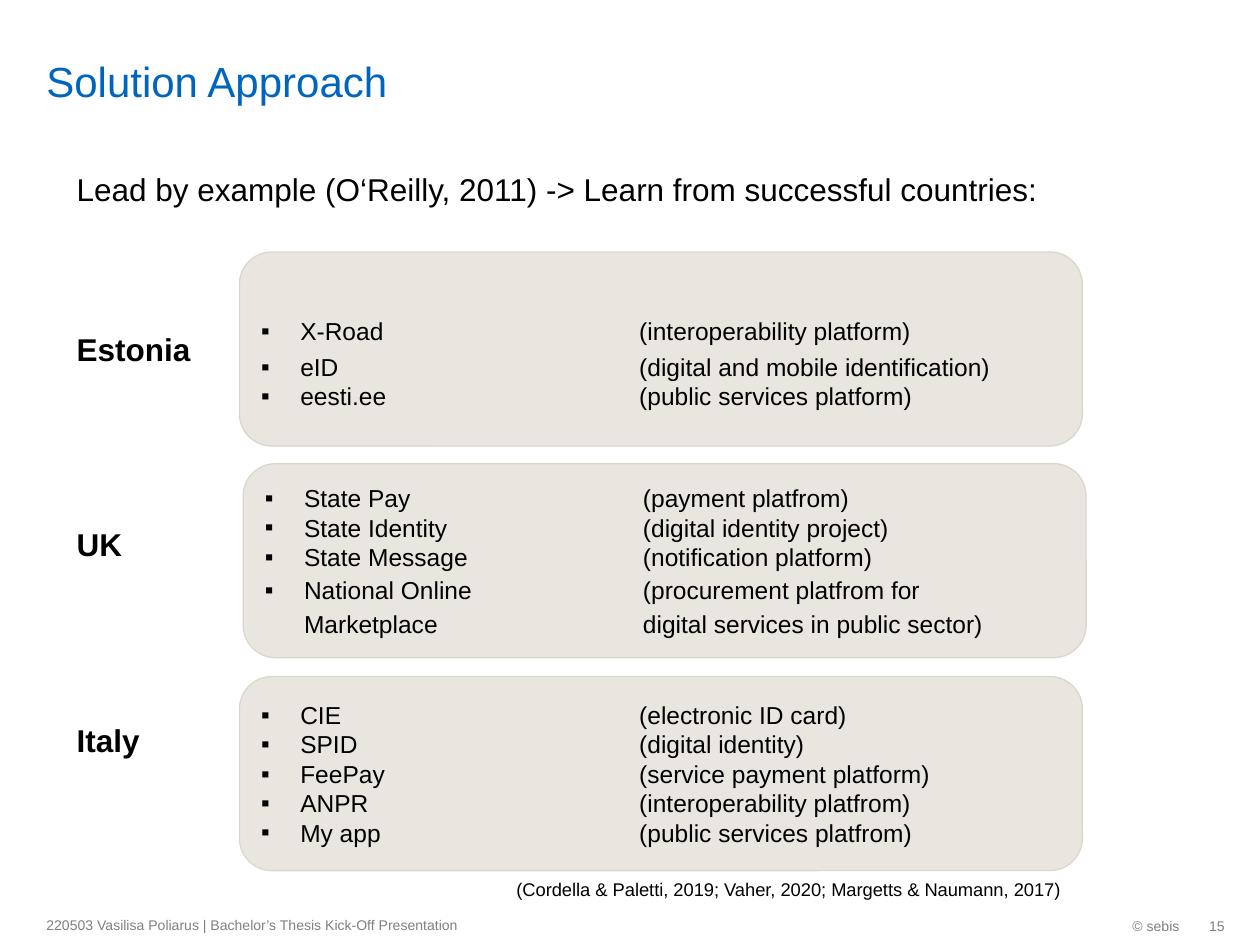
from lxml import etree
from pptx import Presentation
from pptx.dml.color import RGBColor
from pptx.enum.shapes import MSO_SHAPE
from pptx.enum.text import MSO_ANCHOR, PP_ALIGN
from pptx.oxml.ns import qn
from pptx.util import Inches, Pt

ROUNDED = MSO_SHAPE.ROUNDED_RECTANGLE
TOP, MIDDLE, BOTTOM = MSO_ANCHOR.TOP, MSO_ANCHOR.MIDDLE, MSO_ANCHOR.BOTTOM
LEFT, RIGHT = PP_ALIGN.LEFT, PP_ALIGN.RIGHT
BLACK, GREY, BLUE = "000000", "808080", "0065BD"
PANEL_FILL, PANEL_LINE = "E8E6DF", "DAD7CB"


def color(value):
    return RGBColor.from_string(value)


def add_text(text, left, top, width, height, size, hue=BLACK, anchor=TOP,
             align=LEFT, bold=False, wrap=False):
    box = page.shapes.add_textbox(Inches(left), Inches(top), Inches(width), Inches(height))
    frame = box.text_frame
    frame.word_wrap = wrap
    frame.vertical_anchor = anchor
    para = frame.paragraphs[0]
    para.text = text
    para.alignment = align
    para.font.name = "Arial"
    para.font.size = Pt(size)
    para.font.bold = bold
    para.font.color.rgb = color(hue)
    return frame


deck = Presentation()
deck.slide_width, deck.slide_height = Inches(10), Inches(7.5)
page = deck.slides.add_slide(deck.slide_layouts[6])

title = add_text("Solution Approach", 0.27, 0.05, 8.24, 0.79, 24, BLUE, BOTTOM, wrap=True)
title.margin_top = title.margin_bottom = 0
add_text("Lead by example (O‘Reilly, 2011) -> Learn from successful countries:",
         0.51, 1.3, 7.9, 0.4, 18)

# country, label top, panel left, panel top, top inset, services
countries = [
    ("Estonia", 2.57, 1.9, 2, 0.28, [
        ("X-Road", "(interoperability platform)"),
        ("eID", "(digital and mobile identification)"),
        ("eesti.ee", "(public services platform)")]),
    ("UK", 4.12, 1.93, 3.68, 0.05, [
        ("State Pay", "(payment platfrom)"),
        ("State Identity", "(digital identity project)"),
        ("State Message", "(notification platform)"),
        ("National Online",
         "(procurement platfrom for\vMarketplace\tdigital services in public sector)")]),
    ("Italy", 5.67, 1.9, 5.37, 0.05, [
        ("CIE", "(electronic ID card)"),
        ("SPID", "(digital identity)"),
        ("FeePay", "(service payment platform)"),
        ("ANPR", "(interoperability platfrom)"),
        ("My app", "(public services platfrom)")]),
]

for country, label_top, left, top, inset, services in countries:
    add_text(country, 0.51, label_top, 1.11, 0.4, 18, bold=True)
    panel = page.shapes.add_shape(ROUNDED, Inches(left), Inches(top), Inches(6.69), Inches(1.54))
    panel.shadow.inherit = False
    panel.fill.solid()
    panel.fill.fore_color.rgb = color(PANEL_FILL)
    panel.line.color.rgb = color(PANEL_LINE)
    panel.line.width = Pt(0.75)
    frame = panel.text_frame
    frame.word_wrap = True
    frame.vertical_anchor = MIDDLE
    frame.margin_top = Inches(inset)

    for index, (service, purpose) in enumerate(services):
        para = frame.paragraphs[0] if index == 0 else frame.add_paragraph()
        para.text = f"{service}\t{purpose}"
        para.alignment = LEFT
        if service == "eID":
            para.space_before = Pt(3.6)
        if "\v" in purpose:
            para.line_spacing = 1.13
        properties = para._p.get_or_add_pPr()
        properties.set("marL", str(Inches(0.31)))
        properties.set("indent", str(-Inches(0.31)))
        etree.SubElement(properties, qn("a:buFont"), typeface="Arial")
        etree.SubElement(properties, qn("a:buChar"), char="▪")
        tabs = etree.SubElement(properties, qn("a:tabLst"))
        etree.SubElement(tabs, qn("a:tab"), pos=str(Inches(3)), algn="l")
        para.font.name = "Arial"
        para.font.size = Pt(14)
        para.font.color.rgb = color(BLACK)

add_text("(Cordella & Paletti, 2019; Vaher, 2020; Margetts & Naumann, 2017)",
         4, 6.92, 4.62, 0.28, 10.5, wrap=True)
add_text("220503 Vasilisa Poliarus | Bachelor’s Thesis Kick-Off Presentation",
         0.27, 7.18, 4.73, 0.32, 8, GREY, MIDDLE, wrap=True)
add_text("© sebis", 7.7, 7.19, 1.76, 0.32, 8, GREY, MIDDLE, RIGHT, wrap=True)
number = add_text("15", 9.45, 7.19, 0.27, 0.32, 8, GREY, MIDDLE, RIGHT)
number.margin_right = 0

deck.save("out.pptx")
